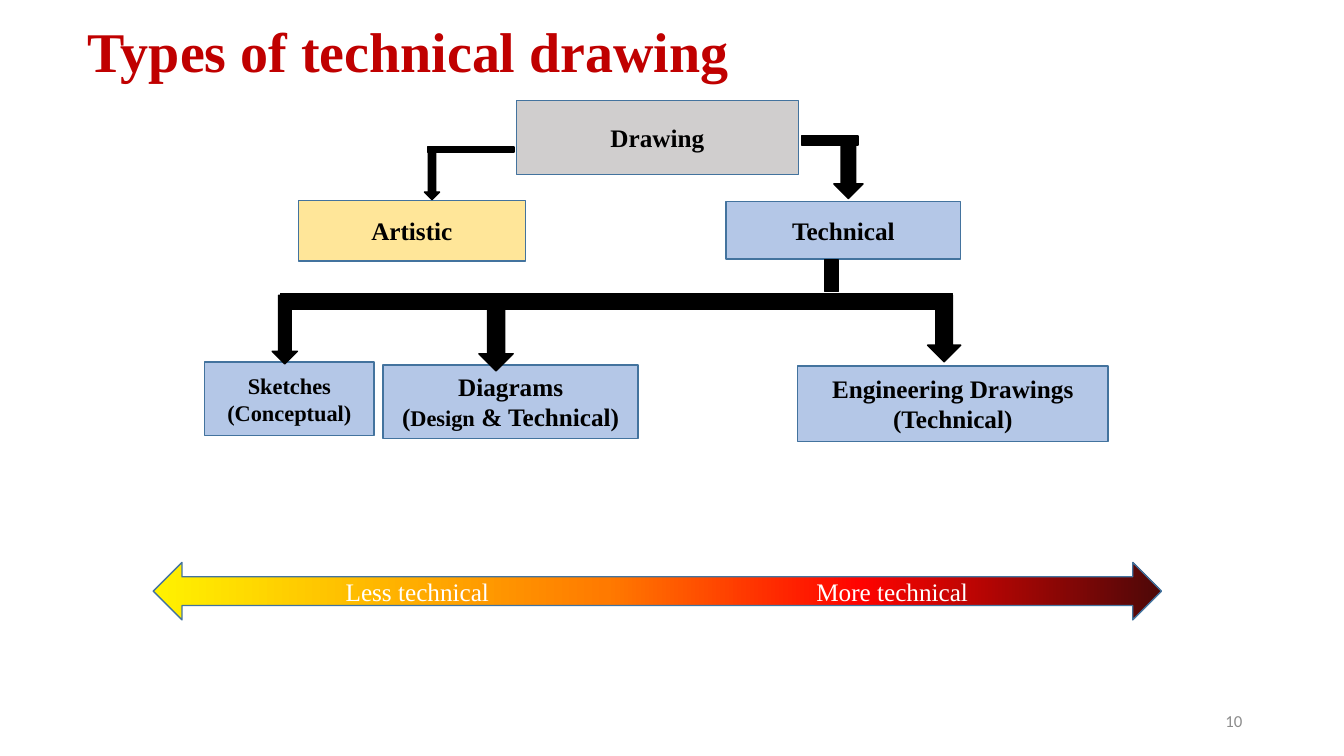
from dataclasses import dataclass
from typing import NamedTuple

from lxml.etree import SubElement
from pptx import Presentation
from pptx.dml.color import RGBColor
from pptx.enum.shapes import MSO_SHAPE as Shape
from pptx.enum.text import MSO_ANCHOR as Anchor, MSO_AUTO_SIZE as AutoSize, PP_ALIGN as Align
from pptx.oxml.ns import qn
from pptx.util import Emu, Pt

EMU_PER_PX = 9144  # 100 px to the inch


@dataclass(frozen=True)
class Theme:
    font: str = "Times New Roman"
    number_font: str = "Calibri"
    title: str = "C00000"
    ink: str = "000000"
    light: str = "FFFFFF"
    number: str = "8C8C8C"
    outline: str = "43739E"
    root: str = "D0CECE"
    artistic: str = "FFE699"
    technical: str = "B4C7E7"
    scale: tuple = ((0, "FFF200"), (45, "FF7A00"), (70, "FF0300"), (100, "4D0808"))
    title_size: int = 40
    body_size: int = 18
    small_size: int = 16
    number_size: int = 12


THEME = Theme()


class Area(NamedTuple):
    left: int
    top: int
    width: int
    height: int

    def emu(self) -> list[Emu]:
        return [Emu(px * EMU_PER_PX) for px in self]


@dataclass(frozen=True)
class Run:
    text: str
    size: int | None = None


@dataclass(frozen=True)
class Box:
    area: Area
    fill: str
    lines: tuple[tuple[Run, ...], ...]
    size: int = THEME.body_size


@dataclass(frozen=True)
class Link:
    kind: Shape
    area: Area


@dataclass(frozen=True)
class Label:
    area: Area
    text: str
    color: str = THEME.light
    size: int = THEME.body_size
    font: str = THEME.font
    align: Align = Align.CENTER


BOXES = (
    Box(Area(512, 100, 280, 73), THEME.root, ((Run("Drawing"),),)),
    Box(Area(296, 199, 225, 60), THEME.artistic, ((Run("Artistic"),),)),
    Box(Area(720, 200, 233, 57), THEME.technical, ((Run("Technical"),),)),
    Box(Area(203, 359, 168, 73), THEME.technical,
        ((Run("Sketches"),), (Run("(Conceptual)"),)), THEME.small_size),
    Box(Area(380, 362, 253, 73), THEME.technical,
        ((Run("Diagrams"),),
         (Run("("), Run("Design", THEME.small_size), Run(" & Technical)")))),
    Box(Area(791, 363, 308, 75), THEME.technical,
        ((Run("Engineering Drawings"),), (Run("(Technical)"),))),
)

LINKS = (
    Link(Shape.RECTANGLE, Area(424, 146, 86, 5)),
    Link(Shape.DOWN_ARROW, Area(421, 147, 15, 51)),
    Link(Shape.RECTANGLE, Area(795, 135, 56, 9)),
    Link(Shape.DOWN_ARROW, Area(827, 144, 29, 53)),
    Link(Shape.RECTANGLE, Area(818, 258, 14, 31)),
    Link(Shape.RECTANGLE, Area(278, 291, 667, 16)),
    Link(Shape.DOWN_ARROW, Area(270, 293, 25, 68)),
    Link(Shape.DOWN_ARROW, Area(475, 303, 34, 65)),
    Link(Shape.DOWN_ARROW, Area(920, 293, 33, 66)),
)

TITLE_AREA = Area(77, 19, 1150, 145)
SCALE_AREA = Area(152, 558, 1000, 57)
LABELS = (
    Label(Area(314, 567, 200, 40), "Less technical"),
    Label(Area(785, 567, 200, 40), "More technical"),
    Label(Area(942, 695, 300, 40), "10", THEME.number, THEME.number_size,
          THEME.number_font, Align.RIGHT),
)


def place(shape, area: Area) -> None:
    shape.left, shape.top, shape.width, shape.height = area.emu()


def style_paragraph(paragraph, size: int, color: str, font: str = THEME.font,
                    bold: bool = False, align: Align = Align.CENTER) -> None:
    paragraph.alignment = align
    paragraph.font.name = font
    paragraph.font.size = Pt(size)
    paragraph.font.bold = bold
    paragraph.font.color.rgb = RGBColor.from_string(color)


def add_outlined(slide, kind: Shape, area: Area, outline: str):
    shape = slide.shapes.add_shape(kind, *area.emu())
    shape.shadow.inherit = False
    shape.line.color.rgb = RGBColor.from_string(outline)
    shape.line.width = Pt(1)
    return shape


def add_solid(slide, kind: Shape, area: Area, fill: str, outline: str):
    shape = add_outlined(slide, kind, area, outline)
    shape.fill.solid()
    shape.fill.fore_color.rgb = RGBColor.from_string(fill)
    return shape


def add_box(slide, box: Box) -> None:
    shape = add_solid(slide, Shape.RECTANGLE, box.area, box.fill, THEME.outline)
    frame = shape.text_frame
    frame.word_wrap = True
    frame.vertical_anchor = Anchor.MIDDLE
    for index, line in enumerate(box.lines):
        paragraph = frame.add_paragraph() if index else frame.paragraphs[0]
        style_paragraph(paragraph, box.size, THEME.ink, bold=True)
        for part in line:
            run = paragraph.add_run()
            run.text = part.text
            if part.size:
                run.font.size = Pt(part.size)


def add_scale(slide) -> None:
    """Draw the double arrow with its four-stop gradient."""
    arrow = add_outlined(slide, Shape.LEFT_RIGHT_ARROW, SCALE_AREA, THEME.outline)
    arrow.fill.gradient()
    arrow.fill.gradient_angle = 0
    stops = next(arrow.element.spPr.iter(qn("a:gsLst")))
    for stop in list(stops):
        stops.remove(stop)
    for percent, color in THEME.scale:
        stop = SubElement(stops, qn("a:gs"), pos=str(percent * 1000))
        SubElement(stop, qn("a:srgbClr"), val=color)


def add_label(slide, label: Label) -> None:
    frame = slide.shapes.add_textbox(*label.area.emu()).text_frame
    frame.word_wrap = True
    frame.vertical_anchor = Anchor.MIDDLE
    paragraph = frame.paragraphs[0]
    paragraph.text = label.text
    style_paragraph(paragraph, label.size, label.color, label.font, align=label.align)


def set_title(slide) -> None:
    title = slide.shapes.title
    place(title, TITLE_AREA)
    frame = title.text_frame
    frame.text = "Types of technical drawing"
    frame.auto_size = AutoSize.NONE
    frame.vertical_anchor = Anchor.TOP
    paragraph = frame.paragraphs[0]
    paragraph.line_spacing = 0.9
    style_paragraph(paragraph, THEME.title_size, THEME.title, bold=True, align=Align.LEFT)


def main() -> None:
    presentation = Presentation()
    presentation.slide_width, presentation.slide_height = Area(0, 0, 1333, 750).emu()[2:]
    slide = presentation.slides.add_slide(presentation.slide_layouts.get_by_name("Title Only"))
    set_title(slide)
    for box in BOXES:
        add_box(slide, box)
    for link in LINKS:
        add_solid(slide, link.kind, link.area, THEME.ink, THEME.ink)
    add_scale(slide)
    for label in LABELS:
        add_label(slide, label)
    presentation.save("out.pptx")


if __name__ == "__main__":
    main()
